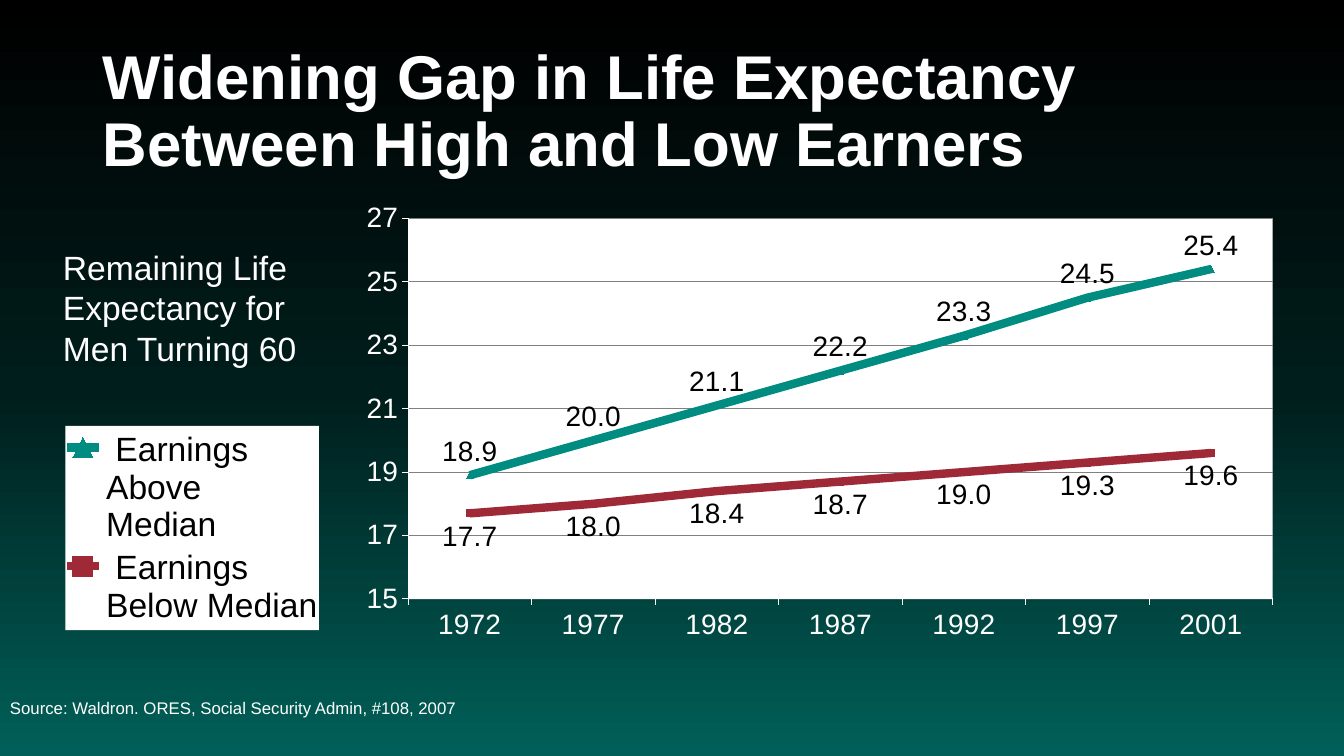
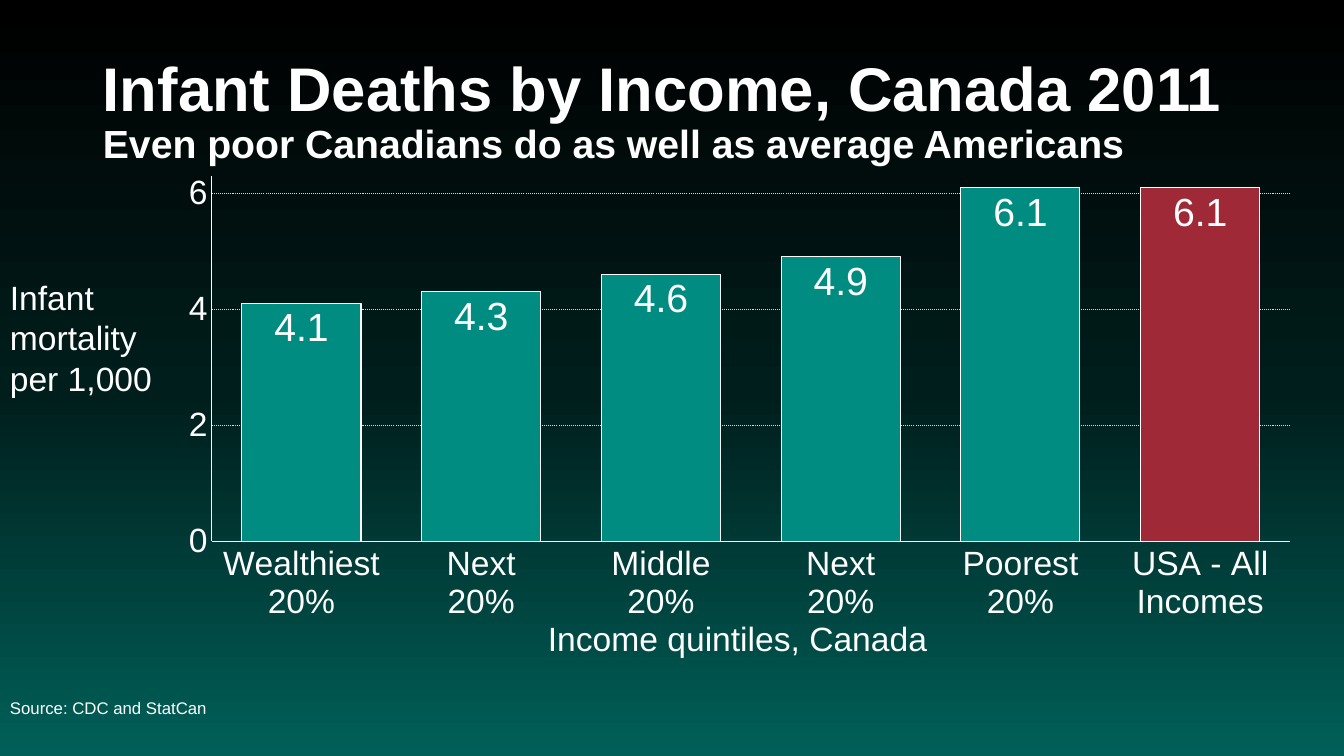
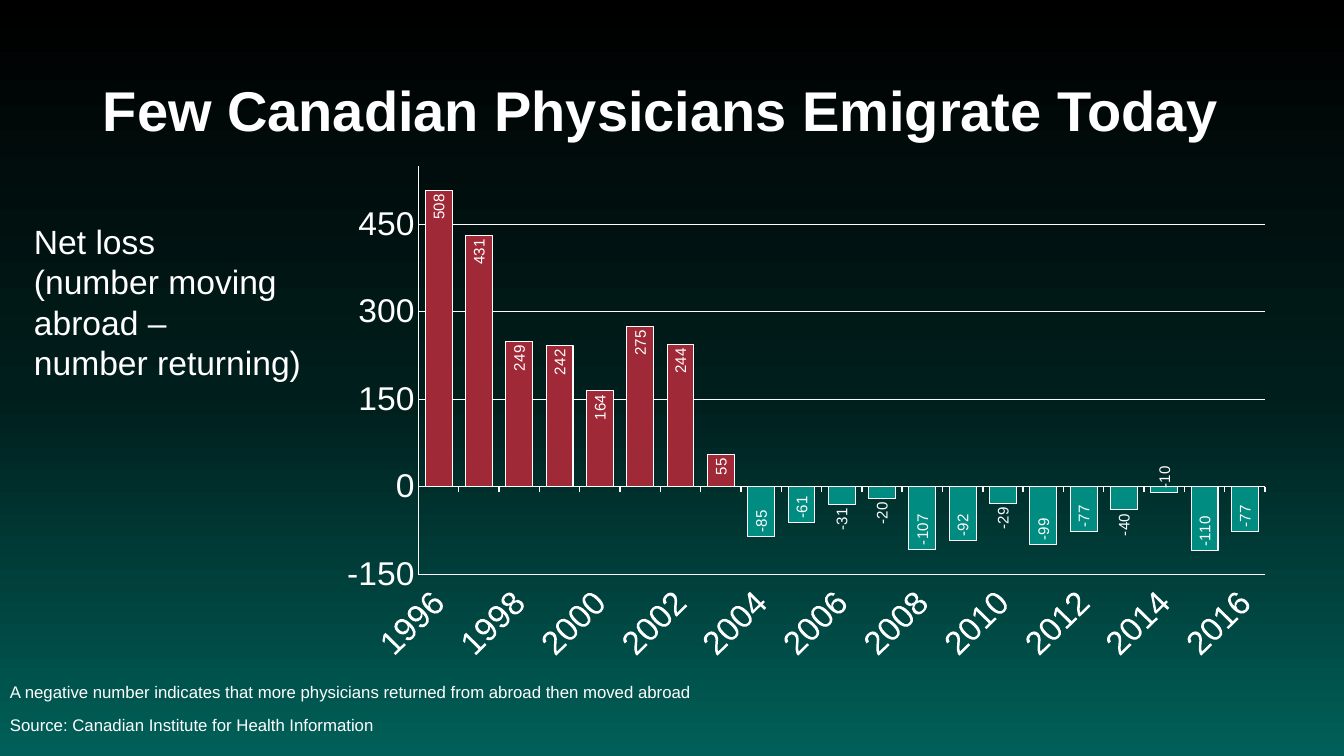
"""Build three slides with charts on life expectancy, infant deaths and physician emigration."""
from lxml.etree import SubElement
from pptx import Presentation
from pptx.chart.data import CategoryChartData
from pptx.dml.color import RGBColor
from pptx.enum.chart import (XL_CHART_TYPE, XL_LABEL_POSITION, XL_LEGEND_POSITION,
                             XL_MARKER_STYLE, XL_TICK_LABEL_POSITION, XL_TICK_MARK)
from pptx.enum.dml import MSO_LINE
from pptx.enum.text import MSO_ANCHOR, PP_ALIGN
from pptx.oxml import parse_xml
from pptx.oxml.ns import nsdecls, qn
from pptx.util import Pt

PX = 914400 / 100.8
FONT = "Arial"
HEX = {"white": "FFFFFF", "black": "000000", "teal": "008C81", "red": "9F2936",
       "middle": "001E1C", "bottom": "006059", "grid": "808080", "dots": "D9D9D9"}
COLOR = {name: RGBColor.from_string(value) for name, value in HEX.items()}


def write(page, area, text, size, bold=False, middle=False, spacing=None, before=0,
          align=PP_ALIGN.LEFT):
    """Add a white text box and return it."""
    box = page.shapes.add_textbox(*[round(length * PX) for length in area])
    frame = box.text_frame
    frame.word_wrap = True
    frame.vertical_anchor = MSO_ANCHOR.MIDDLE if middle else MSO_ANCHOR.TOP
    frame.text = text
    for index, para in enumerate(frame.paragraphs):
        para.alignment = align
        para.line_spacing = spacing
        if index:
            para.space_before = Pt(before)
        for span in para.runs:
            span.font.name = FONT
            span.font.size = Pt(size)
            span.font.bold = bold
            span.font.color.rgb = COLOR["white"]
    return box


def place(parent, index, **settings):
    """Give a chart part a manual layout."""
    for old in parent.findall(qn("c:layout")):
        parent.remove(old)
    layout = parse_xml(f"<c:layout {nsdecls('c')}><c:manualLayout/></c:layout>")
    for name, value in settings.items():
        SubElement(layout[0], qn(f"c:{name}")).set("val", str(value))
    parent.insert(index, layout)


deck = Presentation()
deck.slide_width, deck.slide_height = round(1344 * PX), round(756 * PX)

backdrop = deck.slide_master.background.fill
backdrop.gradient()
backdrop.gradient_angle = 270
stops = deck.slide_master.element.find(".//" + qn("a:gsLst"))
for stop in list(stops):
    stops.remove(stop)
for position, name in ((0, "black"), (52, "middle"), (100, "bottom")):
    stops.append(parse_xml(f'<a:gs {nsdecls("a")} pos="{position * 1000}">'
                           f'<a:srgbClr val="{HEX[name]}"/></a:gs>'))

slides = [
    {"title": "Widening Gap in Life Expectancy Between High and Low Earners",
     "title_size": 44.1,
     "footer": "Source: Waldron. ORES, Social Security Admin, #108, 2007",
     "label": "Remaining Life Expectancy for Men Turning 60",
     "label_area": (53, 242, 265, 132),
     "chart_area": (53, 186, 1237, 477), "kind": XL_CHART_TYPE.LINE_MARKERS, "size": 20,
     "categories": ["1972", "1977", "1982", "1987", "1992", "1997", "2001"],
     "series": {" Earnings Above Median": (18.9, 20, 21.1, 22.2, 23.3, 24.5, 25.4),
                " Earnings Below Median": (17.7, 18, 18.4, 18.7, 19, 19.3, 19.6)},
     "scale": (15, 27, 2), "grid": "grid",
     "ticks": (XL_TICK_MARK.OUTSIDE, XL_TICK_MARK.OUTSIDE)},
    {"title": "Infant Deaths by Income, Canada 2011\v"
              "Even poor Canadians do as well as average Americans",
     "title_size": 44,
     "footer": "Source: CDC and StatCan",
     "label": "Infant mortality per 1,000",
     "label_area": (0, 272, 204, 132),
     "chart_area": (166, 165, 1147, 465), "kind": XL_CHART_TYPE.COLUMN_CLUSTERED, "size": 24,
     "categories": ["Wealthiest\n20%", "Next\n20%", "Middle\n20%", "Next\n20%",
                    "Poorest 20%", "USA - All\nIncomes"],
     "series": {"Series 1": (4.1, 4.3, 4.6, 4.9, 6.1, 6.1)},
     "scale": (0, 6.3, 2), "grid": "dots",
     "ticks": (XL_TICK_MARK.NONE, XL_TICK_MARK.NONE),
     "gap": 51, "overlap": -27, "red_bars": [5], "value_size": 28},
    {"title": "Few Canadian Physicians Emigrate Today",
     "title_size": 40,
     "footer": "A negative number indicates that more physicians returned from abroad "
               "then moved abroad\nSource: Canadian Institute for Health Information",
     "label": "Net loss\n(number moving abroad –\nnumber returning)",
     "label_area": (24, 216, 301, 173),
     "chart_area": (340, 143, 946, 519), "kind": XL_CHART_TYPE.COLUMN_CLUSTERED, "size": 24,
     "categories": [str(year) for year in range(1996, 2017)],
     "series": {"Series 1": (508, 431, 249, 242, 164, 275, 244, 55, -85, -61, -31, -20,
                             -107, -92, -29, -99, -77, -40, -10, -110, -77)},
     "scale": (-150, 550, 150), "grid": "white",
     "ticks": (XL_TICK_MARK.OUTSIDE, XL_TICK_MARK.NONE),
     "gap": 50, "overlap": -5, "red_bars": range(8), "value_size": 11},
]

pages, titles, charts = [], [], []
for content in slides:
    page = deck.slides.add_slide(deck.slide_layouts[6])
    pages.append(page)
    titles.append(write(page, (93, 40, 1166, 146), content["title"], content["title_size"],
                        bold=True, middle=True, spacing=0.9))
    write(page, (0, 663, 907, 93), content["footer"], 12, middle=True, spacing=0.9, before=10)
    write(page, content["label_area"], content["label"], 24)

    data = CategoryChartData()
    data.categories = content["categories"]
    for name, values in content["series"].items():
        data.add_series(name, values)
    area = [round(length * PX) for length in content["chart_area"]]
    chart = page.shapes.add_chart(content["kind"], *area, data).chart
    charts.append(chart)
    chart.has_title = False
    chart.has_legend = False
    chart.font.name = FONT
    chart.font.size = Pt(content["size"])
    chart.font.color.rgb = COLOR["white"]

    for axis, tick in zip((chart.category_axis, chart.value_axis), content["ticks"]):
        axis.major_tick_mark = tick
        axis.minor_tick_mark = XL_TICK_MARK.NONE
        axis.format.line.color.rgb = COLOR["white"]
        axis.format.line.width = Pt(0.75)
    scale = chart.value_axis
    scale.minimum_scale, scale.maximum_scale, scale.major_unit = content["scale"]
    scale.has_major_gridlines = True
    scale.major_gridlines.format.line.color.rgb = COLOR[content["grid"]]
    scale.major_gridlines.format.line.width = Pt(0.75)

    plot = chart.plots[0]
    plot.vary_by_categories = False
    if "gap" in content:
        plot.gap_width, plot.overlap = content["gap"], content["overlap"]
        bars = plot.series[0]
        bars.invert_if_negative = False
        bars.format.fill.solid()
        bars.format.fill.fore_color.rgb = COLOR["teal"]
        bars.format.line.color.rgb = COLOR["white"]
        bars.format.line.width = Pt(0.75)
        for index in content["red_bars"]:
            bar = bars.points[index].format
            bar.fill.solid()
            bar.fill.fore_color.rgb = COLOR["red"]
            bar.line.color.rgb = COLOR["white"]
            bar.line.width = Pt(0.75)
        labels = bars.data_labels
        labels.show_value = True
        labels.position = XL_LABEL_POSITION.INSIDE_END
        labels.font.name = FONT
        labels.font.size = Pt(content["value_size"])
        labels.font.color.rgb = COLOR["white"]

life, infants, physicians = charts

line_styles = (("teal", XL_MARKER_STYLE.TRIANGLE, XL_LABEL_POSITION.ABOVE),
               ("red", XL_MARKER_STYLE.SQUARE, XL_LABEL_POSITION.BELOW))
for line, (name, marker, position) in zip(life.plots[0].series, line_styles):
    line.smooth = False
    line.format.line.color.rgb = COLOR[name]
    line.format.line.width = Pt(6)
    line.marker.style = marker
    line.marker.size = 5
    line.marker.format.fill.solid()
    line.marker.format.fill.fore_color.rgb = COLOR[name]
    line.marker.format.line.color.rgb = COLOR[name]
    labels = line.data_labels
    labels.show_value = True
    labels.position = position
    labels.number_format = "#,##0.0"
    labels.number_format_is_linked = False
    labels.font.name = FONT
    labels.font.size = Pt(20)
    labels.font.color.rgb = COLOR["black"]

white_fill = (f'<c:spPr {nsdecls("c", "a")}><a:solidFill>'
              f'<a:srgbClr val="{HEX["white"]}"/></a:solidFill></c:spPr>')
plot_area = life.element.find(".//" + qn("c:plotArea"))
plot_area.append(parse_xml(white_fill))
place(plot_area, 0, layoutTarget="inner", xMode="edge", yMode="edge",
      x=0.287, y=0.068, w=0.699, h=0.798)
life.has_legend = True
legend = life.legend
legend.position = XL_LEGEND_POSITION.LEFT
legend.include_in_layout = False
legend.font.name = FONT
legend.font.size = Pt(24)
legend.font.color.rgb = COLOR["black"]
legend_part = life.element.find(".//" + qn("c:legend"))
place(legend_part, 1, xMode="edge", yMode="edge", x=0.01, y=0.503, w=0.205, h=0.428)
legend_part.find(qn("c:txPr")).addprevious(parse_xml(white_fill))

titles[1].text_frame.paragraphs[0].runs[1].font.size = Pt(28)
infants.value_axis.major_gridlines.format.line.dash_style = MSO_LINE.ROUND_DOT
write(pages[1], (477, 613, 521, 50), "Income quintiles, Canada", 24, align=PP_ALIGN.CENTER)

place(physicians.element.find(".//" + qn("c:plotArea")), 0, layoutTarget="inner",
      xMode="edge", yMode="edge", x=0.083, y=0.045, w=0.895, h=0.803)
years = physicians.category_axis
years.tick_label_position = XL_TICK_LABEL_POSITION.LOW
years.format.line.width = Pt(1)
years.tick_labels.font.size = Pt(24)
years.tick_labels.font.color.rgb = COLOR["white"]
years.tick_labels.font.name = FONT
physicians.element.find(".//" + qn("c:catAx")).find(
    ".//" + qn("a:bodyPr")).set("rot", "-2700000")
physicians.value_axis.tick_labels.number_format = "#,##0"
physicians.value_axis.tick_labels.number_format_is_linked = False
for index in (10, 11, 14, 17):
    label = physicians.plots[0].series[0].points[index].data_label
    label.font.name = FONT
    label.font.size = Pt(11)
    label.font.color.rgb = COLOR["white"]
    label.position = XL_LABEL_POSITION.OUTSIDE_END
label_part = physicians.element.find(".//" + qn("c:ser")).find(qn("c:dLbls"))
for body in label_part.iter(qn("a:bodyPr")):
    body.set("rot", "-5400000")
    body.set("vert", "horz")

deck.save("out.pptx")
